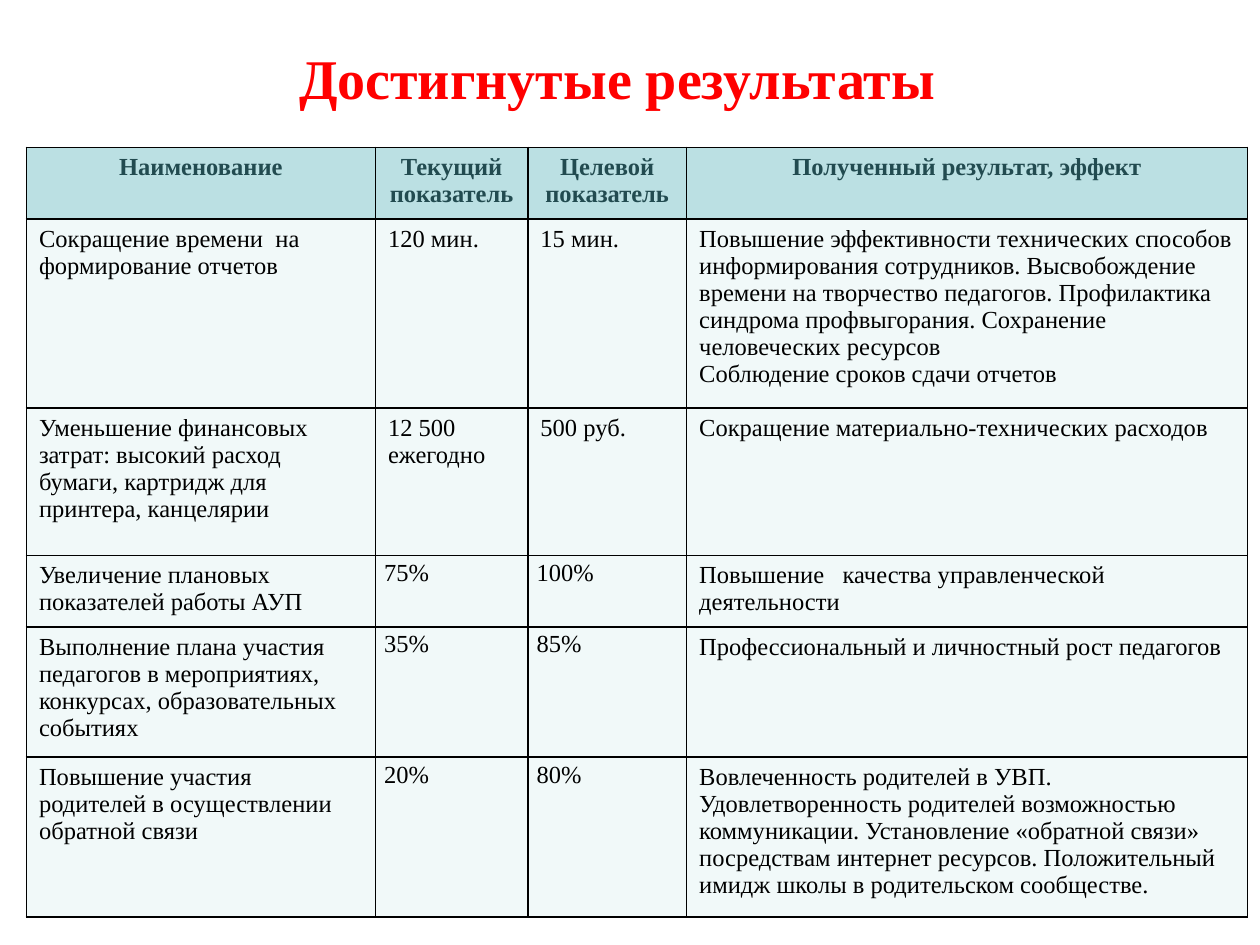
from lxml import etree
from pptx import Presentation
from pptx.dml.color import RGBColor
from pptx.enum import text
from pptx.oxml import ns
from pptx.util import Inches, Pt

HEAD = ["Наименование", "Текущий показатель", "Целевой показатель",
        "Полученный результат, эффект"]
ROWS = [
    ["Сокращение времени  на формирование отчетов", "120 мин.", "15 мин.",
     "Повышение эффективности технических способов информирования сотрудников. "
     "Высвобождение времени на творчество педагогов. Профилактика синдрома "
     "профвыгорания. Сохранение человеческих ресурсов\n"
     "Соблюдение сроков сдачи отчетов"],
    ["Уменьшение финансовых затрат: высокий расход бумаги, картридж для "
     "принтера, канцелярии", "12 500 ежегодно", "500 руб.",
     "Сокращение материально-технических расходов"],
    ["Увеличение плановых показателей работы АУП", "75%", "100%",
     "Повышение   качества управленческой деятельности"],
    ["Выполнение плана участия педагогов в мероприятиях, конкурсах, "
     "образовательных событиях", "35%", "85%",
     "Профессиональный и личностный рост педагогов"],
    ["Повышение участия  родителей в осуществлении обратной связи", "20%", "80%",
     "Вовлеченность родителей в УВП. Удовлетворенность родителей возможностью "
     "коммуникации. Установление «обратной связи» посредствам интернет "
     "ресурсов. Положительный имидж школы в родительском сообществе."],
]
WIDTHS = [2.77, 1.21, 1.26, 4.45]
HEIGHTS = [0.54, 1.39, 1.17, 0.56, 0.96, 1.17]


def color(code):
    return RGBColor.from_string(code)


class Page:
    face = "Times New Roman"
    ink = "000000"
    size = 14

    def __init__(self, deck):
        self.slide = deck.slides.add_slide(deck.slide_layouts[5])

    def style(self, para, size, tint, bold=False, align=None):
        para.alignment = align
        for run in para.runs:
            font = run.font
            font.name, font.size, font.bold = self.face, Pt(size), bold
            font.color.rgb = color(tint)

    def title(self, words, left, top, width, height):
        box = self.slide.shapes.title
        box.left, box.top = Inches(left), Inches(top)
        box.width, box.height = Inches(width), Inches(height)
        frame = box.text_frame
        frame.text = words
        frame.word_wrap = False
        frame.auto_size = text.MSO_AUTO_SIZE.SHAPE_TO_FIT_TEXT
        self.style(frame.paragraphs[0], 32, "FF0000", True, text.PP_ALIGN.CENTER)

    def border(self, cell):
        props = cell._tc.get_or_add_tcPr()
        for spot, side in enumerate(("a:lnL", "a:lnR", "a:lnT", "a:lnB")):
            line = etree.Element(ns.qn(side), w=str(Pt(1)))
            fill = etree.SubElement(line, ns.qn("a:solidFill"))
            etree.SubElement(fill, ns.qn("a:srgbClr"), val=self.ink)
            props.insert(spot, line)

    def cell(self, cell, words, head):
        cell.text_frame.text = words
        cell.fill.solid()
        cell.fill.fore_color.rgb = color("BBE0E3" if head else "F1F9F9")
        self.border(cell)
        share = words.endswith("%")
        if share:
            cell.margin_left = cell.margin_right = Inches(0.07)
            cell.margin_top = cell.margin_bottom = 0
        for para in cell.text_frame.paragraphs:
            if head:
                self.style(para, self.size, "224B50", True, text.PP_ALIGN.CENTER)
            else:
                self.style(para, self.size, self.ink)
            if share:
                para.line_spacing = 1.15

    def table(self, rows, widths, heights, left, top):
        table = self.slide.shapes.add_table(
            len(rows), len(widths), Inches(left), Inches(top),
            Inches(sum(widths)), Inches(sum(heights))).table
        for col, width in zip(table.columns, widths):
            col.width = Inches(width)
        for row, height in zip(table.rows, heights):
            row.height = Inches(height)
        for r, row in enumerate(rows):
            for c, words in enumerate(row):
                self.cell(table.cell(r, c), words, r == 0)


def main():
    deck = Presentation()
    deck.slide_width, deck.slide_height = Inches(10), Inches(7.5)
    page = Page(deck)
    page.title("Достигнутые результаты", 2.25, 0.29, 5.3, 0.64)
    page.table([HEAD] + ROWS, WIDTHS, HEIGHTS, 0.21, 1.17)
    deck.save("out.pptx")


if __name__ == "__main__":
    main()
